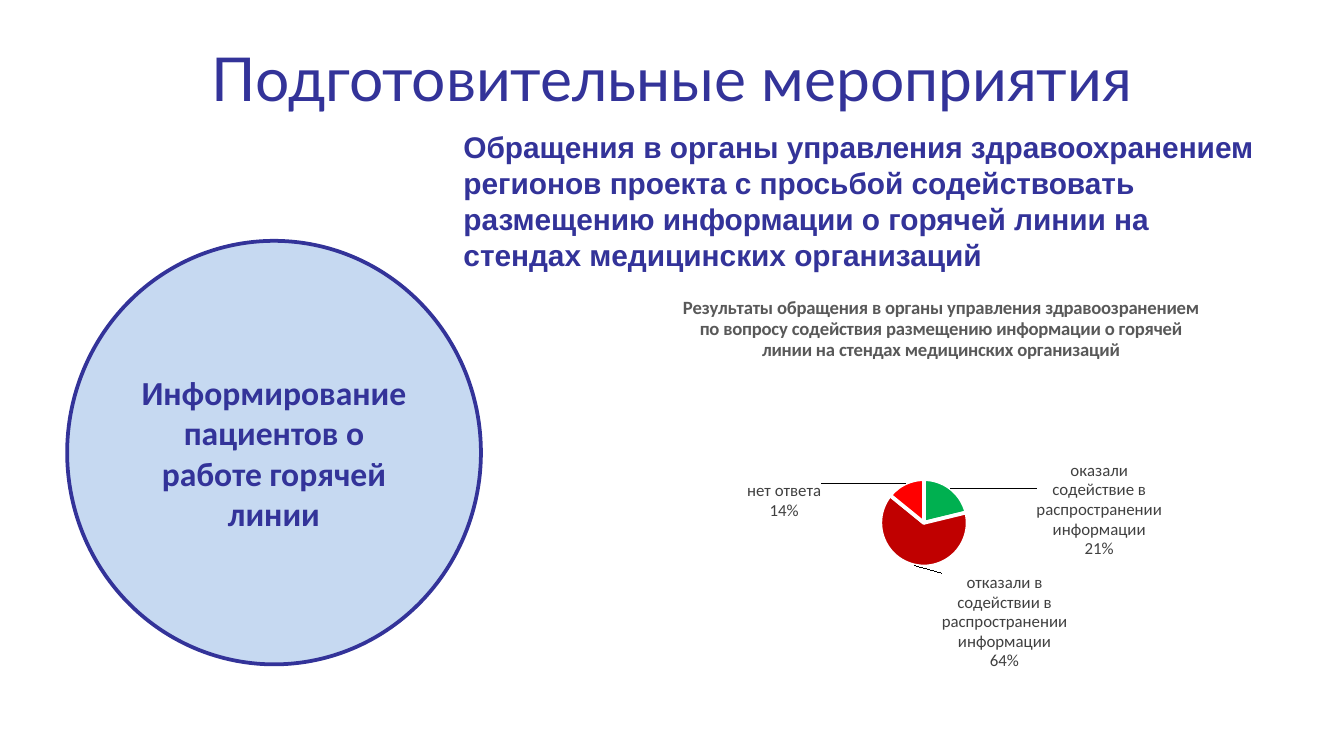
from lxml import etree
from pptx import Presentation
from pptx.chart.data import CategoryChartData
from pptx.dml.color import RGBColor
from pptx.enum.chart import XL_CHART_TYPE, XL_LABEL_POSITION
from pptx.enum.shapes import MSO_SHAPE
from pptx.enum.text import MSO_ANCHOR, PP_ALIGN
from pptx.oxml.ns import qn
from pptx.util import Cm, Pt

PIE = XL_CHART_TYPE.PIE
OUTSIDE = XL_LABEL_POSITION.OUTSIDE_END
LEFT, CENTER = PP_ALIGN.LEFT, PP_ALIGN.CENTER
TOP, MIDDLE = MSO_ANCHOR.TOP, MSO_ANCHOR.MIDDLE

NAVY = RGBColor(0x33, 0x33, 0x99)
PALE_BLUE = RGBColor(0xC6, 0xD9, 0xF1)
WHITE = RGBColor(0xFF, 0xFF, 0xFF)
GREY = RGBColor(0x59, 0x59, 0x59)
DARK_GREY = RGBColor(0x40, 0x40, 0x40)
GREEN = RGBColor(0x00, 0xB0, 0x50)
DARK_RED = RGBColor(0xC0, 0x00, 0x00)
RED = RGBColor(0xFF, 0x00, 0x00)

# Content
TITLE = "Подготовительные мероприятия"
TOPIC = "Информирование пациентов о работе горячей линии"
APPEAL = ("Обращения в органы управления здравоохранением регионов проекта "
          "с просьбой содействовать размещению информации о горячей линии "
          "на стендах медицинских организаций")
CHART_TITLE = ("Результаты обращения в органы управления здравоозранением "
               "по вопросу содействия размещению информации о горячей линии "
               "на стендах медицинских организаций")
# Answer, percent, slice colour, label shift as a share of the chart
ANSWERS = [
    ("оказали содействие в распространении информации", 21, GREEN, (0.12, 0.19)),
    ("отказали в содействии в распространении информации", 64, DARK_RED, (0.23, 0)),
    ("нет ответа", 14, RED, (-0.12, 0.11)),
]
PLOT_AREA = {"x": 0.41, "y": 0.5, "w": 0.13, "h": 0.22}


def set_font(font, color, **values):
    for name, value in values.items():
        setattr(font, name, value)
    font.color.rgb = color


def write(shape, text, align, anchor, **values):
    tf = shape.text_frame
    tf.word_wrap = True
    tf.vertical_anchor = anchor
    p = tf.paragraphs[0]
    p.alignment = align
    r = p.add_run()
    r.text = text
    set_font(r.font, NAVY, **values)


def make_layout(values, inner=False):
    layout = etree.Element(qn("c:layout"))
    manual = etree.SubElement(layout, qn("c:manualLayout"))
    settings = {}
    if inner:
        settings = {"layoutTarget": "inner", "xMode": "edge", "yMode": "edge"}
    for name, value in {**settings, **values}.items():
        etree.SubElement(manual, qn(f"c:{name}")).set("val", str(value))
    return layout


prs = Presentation()
prs.slide_width, prs.slide_height = Cm(25.4), Cm(14.28)
s = prs.slides.add_slide(prs.slide_layouts[6])

# Title
title = s.shapes.add_textbox(Cm(1.27), Cm(0.58), Cm(22.86), Cm(1.78))
write(title, TITLE, CENTER, MIDDLE, name="Lato", size=Pt(32.4))

# Topic circle
circle = s.shapes.add_shape(MSO_SHAPE.OVAL, Cm(1.27), Cm(4.55), Cm(7.82), Cm(8))
circle.shadow.inherit = False
circle.fill.solid()
circle.fill.fore_color.rgb = PALE_BLUE
circle.line.color.rgb = NAVY
circle.line.width = Pt(2)
write(circle, TOPIC, CENTER, MIDDLE, name="Calibri", size=Pt(18), bold=True)

# Appeal text
appeal = s.shapes.add_textbox(Cm(8.51), Cm(2.31), Cm(15.62), Cm(3))
write(appeal, APPEAL, LEFT, TOP, name="Arial", size=Pt(16), bold=True)

# Pie chart of answers
data = CategoryChartData()
data.categories = [answer[0] for answer in ANSWERS]
data.add_series("Series 1", [answer[1] for answer in ANSWERS])
chart = s.shapes.add_chart(PIE, Cm(11.43), Cm(5.23), Cm(12.7), Cm(7.62), data).chart
set_font(chart.font, RGBColor(0, 0, 0), name="Calibri", size=Pt(10))
chart.has_legend = False
chart.has_title = True
tf = chart.chart_title.text_frame
tf.text = CHART_TITLE
set_font(tf.paragraphs[0].runs[0].font, GREY, name="Calibri", size=Pt(10), bold=True)

plot = chart.plots[0]
plot.vary_by_categories = True
plot_area = chart._chartSpace.find(".//" + qn("c:plotArea"))
for old in plot_area.findall(qn("c:layout")):
    plot_area.remove(old)
plot_area.insert(0, make_layout(PLOT_AREA, inner=True))

# Slices and their shifted labels
series = plot.series[0]
labels = series.data_labels
labels.show_value = labels.show_category_name = True
labels.number_format = '0"%"'
labels.number_format_is_linked = False
labels.position = OUTSIDE
set_font(labels.font, DARK_GREY, name="Calibri", size=Pt(9))
for i, (_, _, color, (dx, dy)) in enumerate(ANSWERS):
    point = series.points[i]
    point.format.fill.solid()
    point.format.fill.fore_color.rgb = color
    point.format.line.color.rgb = WHITE
    point.format.line.width = Pt(2)
    label = point.data_label
    label.position = OUTSIDE
    set_font(label.font, DARK_GREY, name="Calibri", size=Pt(9))
    d_lbl = series._element.findall(".//" + qn("c:dLbl"))[i]
    d_lbl.insert(1, make_layout({"x": dx, "y": dy}))
    num_fmt = etree.Element(qn("c:numFmt"), formatCode='0"%"', sourceLinked="0")
    d_lbl.insert(2, num_fmt)
    d_lbl.find(qn("c:showCatName")).set("val", "1")
    etree.SubElement(d_lbl, qn("c:separator")).text = "\n"

prs.save("out.pptx")
